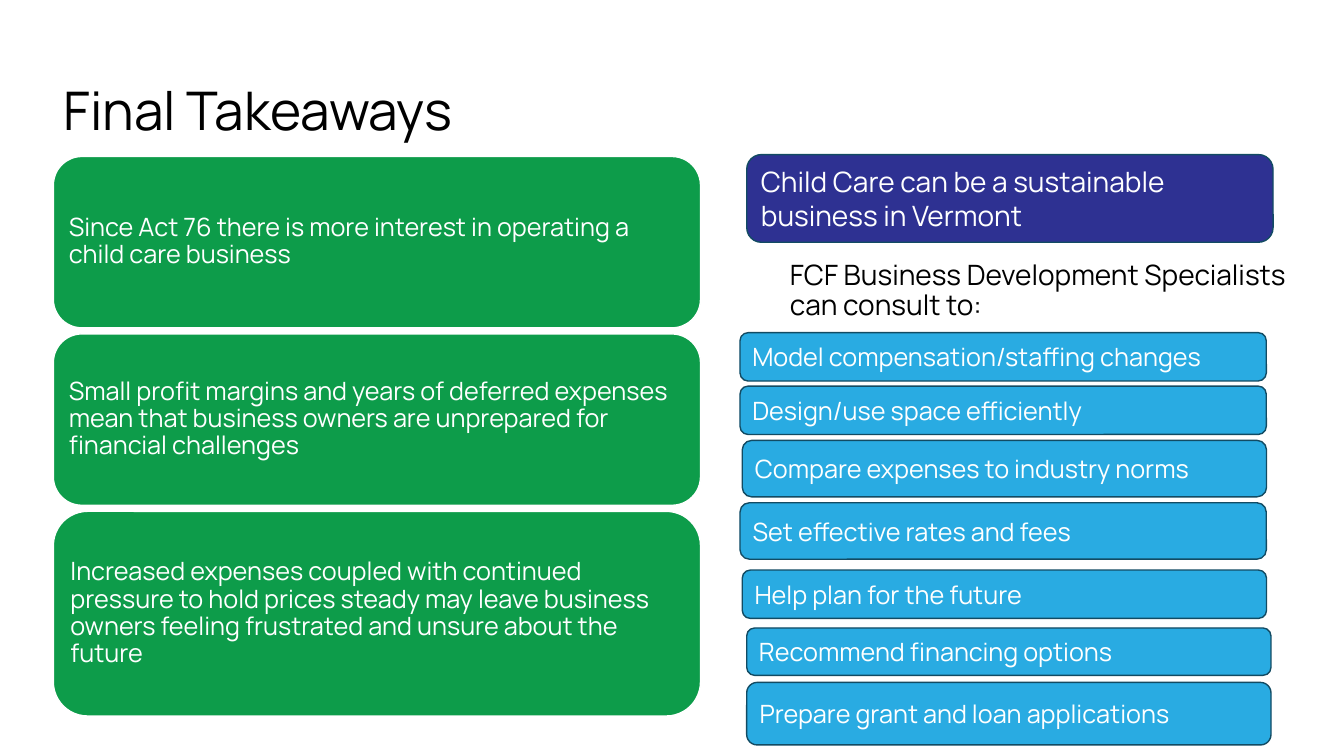
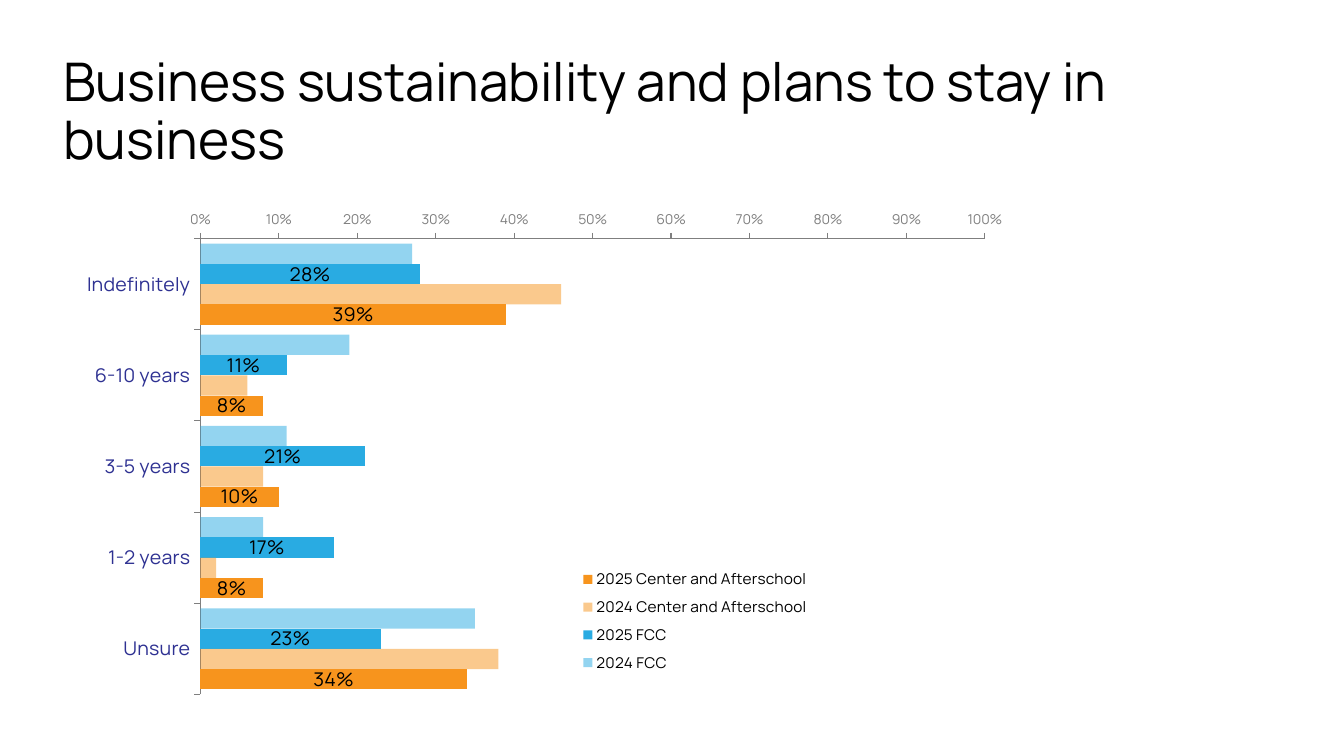
from lxml import etree
from pptx import Presentation
from pptx import util as u
from pptx.chart import data as chart_data
from pptx.dml import color
from pptx.enum import chart as charts, shapes, text
from pptx.oxml import ns

FONT = "Manrope"
BLACK, WHITE, GREY = "000000", "FFFFFF", "7F7F7F"
GREEN, NAVY, BLUE, ORANGE, OUTLINE = "0D9C4A", "2E3192", "29ABE2", "F7941D", "124B63"
MARGIN = 3.97

presentation = Presentation()
presentation.slide_width = u.Inches(13.33)
presentation.slide_height = u.Inches(7.5)
column = presentation.slide_width / 100
row = presentation.slide_height / 100


def paint(fill, colour):
    fill.solid()
    fill.fore_color.rgb = color.RGBColor.from_string(colour)


def add_box(slide, place, words, size, fill=None, line=None, spacing=1, anchor="MIDDLE"):
    left, top, width, height = place
    area = [int(n) for n in (left * column, top * row, width * column, height * row)]
    if fill:
        shape = slide.shapes.add_shape(shapes.MSO_SHAPE.ROUNDED_RECTANGLE, *area)
        shape.shadow.inherit = False
        paint(shape.fill, fill)
        paint(shape.line.fill, line)
        shape.line.width = u.Pt(1)
    else:
        shape = slide.shapes.add_textbox(*area)
    frame = shape.text_frame
    frame.word_wrap = True
    frame.vertical_anchor = text.MSO_ANCHOR[anchor]
    paragraph = frame.paragraphs[0]
    paragraph.alignment = text.PP_ALIGN.LEFT
    paragraph.line_spacing = spacing
    run = paragraph.add_run()
    run.text = words
    run.font.name = FONT
    run.font.size = u.Pt(size)
    paint(run.font.fill, WHITE if fill else BLACK)
    return shape


slides = []
for title in ("Final Takeaways", "Business sustainability and plans to stay in business"):
    slide = presentation.slides.add_slide(presentation.slide_layouts[6])
    add_box(slide, (MARGIN, 5.33, 89.05, 19.33), title, 38, spacing=0.9)
    slides.append(slide)
takeaways, plans = slides

findings = [
    (22.67, "Since Act 76 there is more interest in operating a child care business"),
    (22.67, "Small profit margins and years of deferred expenses mean that business owners "
            "are unprepared for financial challenges"),
    (27.07, "Increased expenses coupled with continued pressure to hold prices steady may "
            "leave business owners feeling frustrated and unsure about the future"),
]
top = 20.7
for height, words in findings:
    card = add_box(takeaways, (MARGIN, top, 48.15, height), words, 18, GREEN, WHITE, 0.9)
    card.text_frame.margin_left = card.text_frame.margin_right = u.Inches(0.07)
    top += height + 0.8

add_box(takeaways, (55.56, 20.45, 39.16, 11.6),
        "Child Care can be a sustainable business in Vermont", 20, NAVY, OUTLINE)
add_box(takeaways, (58.03, 33.87, 39.16, 12.13),
        "FCF Business Development Specialists can consult to:", 20, spacing=0.9, anchor="TOP")

services = [
    (55.06, 44, 39.16, 6.4, "Model compensation/staffing changes"),
    (55.06, 51.07, 39.16, 6.4, "Design/use space efficiently"),
    (55.23, 58.25, 39.01, 7.47, "Compare expenses to industry norms"),
    (55.06, 66.5, 39.16, 7.47, "Set effective rates and fees"),
    (55.23, 75.4, 39.01, 6.4, "Help plan for the future"),
    (55.56, 83.07, 39.01, 6.27, "Recommend financing options"),
    (55.56, 90.27, 39.01, 8.27, "Prepare grant and loan applications"),
]
for *place, words in services:
    add_box(takeaways, place, words, 18, BLUE, OUTLINE)

answers = [
    ("2024 FCC", BLUE, (0.27, 0.19, 0.11, 0.08, 0.35)),
    ("2025 FCC", BLUE, (0.28, 0.11, 0.21, 0.17, 0.23)),
    ("2024 Center and Afterschool", ORANGE, (0.46, 0.06, 0.08, 0.02, 0.38)),
    ("2025 Center and Afterschool", ORANGE, (0.39, 0.08, 0.1, 0.08, 0.34)),
]
data = chart_data.CategoryChartData(number_format="0%")
data.categories = ["Indefinitely", "6-10 years", "3-5 years", "1-2 years", "Unsure"]
for name, colour, values in answers:
    data.add_series(name, values)
chart = plans.shapes.add_chart(
    charts.XL_CHART_TYPE.BAR_CLUSTERED, int(4.65 * column), int(27.87 * row),
    int(89.65 * column), int(69.07 * row), data).chart
chart.has_title = False
chart.font.name = FONT
chart.font.size = u.Pt(18)
paint(chart.font.fill, BLACK)

plot = chart.plots[0]
plot.gap_width = 50
plot.overlap = 0
plot.vary_by_categories = False
for series, (name, colour, values) in zip(plot.series, answers):
    paint(series.format.fill, colour)
    series.invert_if_negative = False
    if name.startswith("2024"):
        tint = series._element.xpath(".//a:srgbClr")[0]
        etree.SubElement(tint, ns.qn("a:alpha"), val="50000")
    else:
        labels = series.data_labels
        labels.show_value = True
        labels.position = charts.XL_LABEL_POSITION.CENTER
        labels.number_format = "0%"
        labels.number_format_is_linked = False
        labels.font.name = FONT
        labels.font.size = u.Pt(14)
        paint(labels.font.fill, BLACK)

categories, shares = chart.category_axis, chart.value_axis
for axis, size, colour in ((categories, 14, NAVY), (shares, 10, GREY)):
    axis.has_major_gridlines = False
    axis.major_tick_mark = charts.XL_TICK_MARK.OUTSIDE
    axis.minor_tick_mark = charts.XL_TICK_MARK.NONE
    paint(axis.format.line.fill, GREY)
    axis.format.line.width = u.Pt(0.75)
    axis.tick_labels.font.name = FONT
    axis.tick_labels.font.size = u.Pt(size)
    paint(axis.tick_labels.font.fill, colour)
categories.reverse_order = True
categories.tick_label_position = charts.XL_TICK_LABEL_POSITION.LOW
categories.crosses = charts.XL_AXIS_CROSSES.MINIMUM
shares.minimum_scale, shares.maximum_scale, shares.major_unit = 0, 1, 0.1
shares.tick_labels.number_format = "0%"
shares.tick_labels.number_format_is_linked = False

chart.has_legend = True
legend = chart.legend
legend.position = charts.XL_LEGEND_POSITION.RIGHT
legend.include_in_layout = False
legend.font.name = FONT
legend.font.size = u.Pt(11)
paint(legend.font.fill, BLACK)

plot_area = chart._chartSpace.xpath(".//c:plotArea")[0]
for owner, index, target, place in (
        (plot_area, 0, "inner", (11.45, 2, 65.1, 90.4)),
        (legend._element, 1, None, (42.5, 66.2, 20, 23.3))):
    for old in owner.findall(ns.qn("c:layout")):
        owner.remove(old)
    layout = etree.Element(ns.qn("c:layout"))
    manual = etree.SubElement(layout, ns.qn("c:manualLayout"))
    if target:
        etree.SubElement(manual, ns.qn("c:layoutTarget"), val=target)
    for tag in ("xMode", "yMode"):
        etree.SubElement(manual, ns.qn("c:" + tag), val="edge")
    for tag, percent in zip("xywh", place):
        etree.SubElement(manual, ns.qn("c:" + tag), val=str(percent / 100))
    owner.insert(index, layout)

presentation.save("out.pptx")
